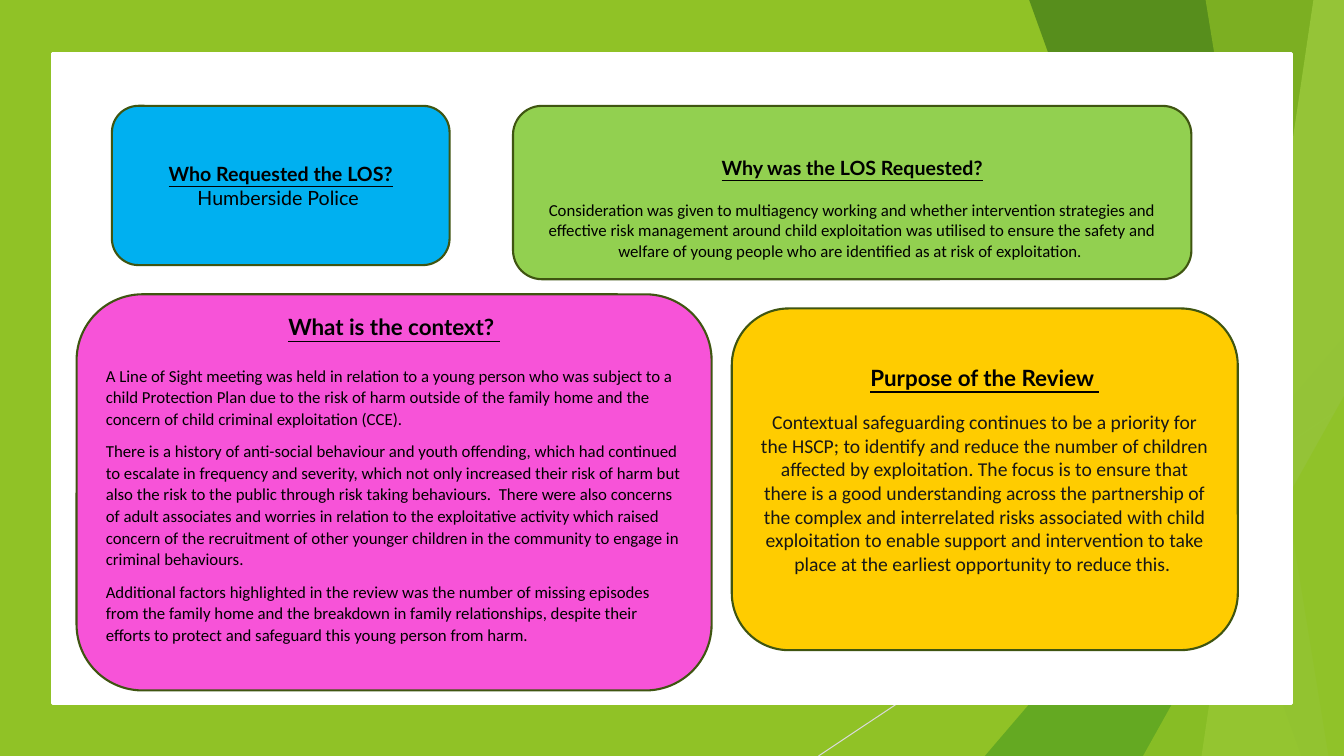
from collections import namedtuple
from dataclasses import dataclass

from lxml import etree
from pptx import Presentation, util as u
from pptx.dml.color import RGBColor
from pptx.enum import shapes, text
from pptx.oxml import ns

COLUMNS, ROWS = 160, 90

Box = namedtuple("Box", "left top width height")
Card = namedtuple("Card", "cells fill heading heading_size body body_size "
                  "gap top_room bottom_room body_color align spacing after",
                  defaults=[0, 0, 0, "000000", text.PP_ALIGN.CENTER, 1.0, 0])


@dataclass(frozen=True)
class Theme:
    green: str = "90C226"
    mid_green: str = "54A021"
    dark_green: str = "3F7819"
    pale_green: str = "C0E474"
    white: str = "FFFFFF"
    ray: str = "D9D9D9"
    outline: str = "3F5511"
    ink: str = "000000"
    soft_ink: str = "171717"
    blue: str = "00B0F0"
    lime: str = "92D050"
    pink: str = "F753D8"
    yellow: str = "FFCC00"
    heading_font: str = "Lato"
    body_font: str = "Calibri"
    large: int = 16
    medium: int = 14
    small: int = 12


THEME = Theme()

CARDS = [
    Card((13.32, 12.6, 40.2, 18.96), THEME.blue, "Who Requested the LOS?", THEME.medium,
         ["Humberside Police "], THEME.medium),
    Card((61.08, 12.6, 80.76, 20.64), THEME.lime, "Why was the LOS Requested?", THEME.medium,
         ["Consideration was given to multiagency working and whether intervention strategies "
          "and effective risk management around child exploitation was utilised to ensure the "
          "safety and welfare of young people who are identified as at risk of exploitation. "],
         THEME.small, gap=15, top_room=22),
    Card((9.12, 35.04, 75.6, 47.16), THEME.pink, "What is the context? ", THEME.large,
         ["A Line of Sight meeting was held in relation to a young person who was subject to a "
          "child Protection Plan due to the risk of harm outside of the family home and the "
          "concern of child criminal exploitation (CCE).",
          "There is a history of anti-social behaviour and youth offending, which had continued "
          "to escalate in frequency and severity, which not only increased their risk of harm "
          "but also the risk to the public through risk taking behaviours.  There were also "
          "concerns of adult associates and worries in relation to the exploitative activity "
          "which raised concern of the recruitment of other younger children in the community "
          "to engage in criminal behaviours.",
          "Additional factors highlighted in the review was the number of missing episodes from "
          "the family home and the breakdown in family relationships, despite their efforts to "
          "protect and safeguard this young person from harm."],
         THEME.small, gap=17, bottom_room=19, align=text.PP_ALIGN.LEFT, spacing=1.07, after=8),
    Card((87.12, 36.72, 60.24, 40.68), THEME.yellow, "Purpose of the Review ", THEME.large,
         ["Contextual safeguarding continues to be a priority for the HSCP; to identify and "
          "reduce the number of children affected by exploitation. The focus is to ensure that "
          "there is a good understanding across the partnership of the complex and interrelated "
          "risks associated with child exploitation to enable support and intervention to take "
          "place at the earliest opportunity to reduce this. "],
         THEME.medium, gap=14, bottom_room=14, body_color=THEME.soft_ink),
]


def point(box, column, row):
    return (round(box.left + box.width * column / COLUMNS),
            round(box.top + box.height * row / ROWS))


def cell_box(box, column, row, columns, rows):
    return Box(*point(box, column, row),
               round(box.width * columns / COLUMNS), round(box.height * rows / ROWS))


def paint(shape, fill, opacity=100, line=None, width=1.0):
    shape.shadow.inherit = False
    shape.fill.solid()
    shape.fill.fore_color.rgb = RGBColor.from_string(fill)
    if opacity < 100:
        color = shape.fill._xPr.find(ns.qn("a:solidFill"))[0]
        etree.SubElement(color, ns.qn("a:alpha"), val=str(opacity * 1000))
    if line:
        shape.line.color.rgb = RGBColor.from_string(line)
        shape.line.width = u.Pt(width)
    else:
        shape.line.fill.background()


def add_ray(slide, box):
    ray = slide.shapes.add_connector(shapes.MSO_CONNECTOR.STRAIGHT,
                                     *point(box, COLUMNS, 48.36), *point(box, 97.44, ROWS))
    ray.line.color.rgb = RGBColor.from_string(THEME.ray)
    ray.line.width = u.Pt(0.75)
    etree.SubElement(ray._element.spPr, ns.qn("a:effectLst"))


def add_facet(slide, box, top_column, bottom_column, fill, opacity):
    """Full-height panel whose slanted left edge runs between the two columns."""
    corners = [point(box, *corner) for corner in
               [(top_column, 0), (COLUMNS, 0), (COLUMNS, ROWS), (bottom_column, ROWS)]]
    builder = slide.shapes.build_freeform(*corners[0])
    builder.add_line_segments(corners[1:], close=True)
    paint(builder.convert_to_shape(), fill, opacity)


def add_wedge(slide, box, column, row, fill, opacity):
    """Right triangle that fills the lower right corner from the given cell."""
    wedge = slide.shapes.add_shape(shapes.MSO_SHAPE.ISOSCELES_TRIANGLE,
                                   *cell_box(box, column, row, COLUMNS - column, ROWS - row))
    wedge.adjustments[0] = 1.0
    paint(wedge, fill, opacity)


def add_backdrop(slide, box):
    paint(slide.shapes.add_shape(shapes.MSO_SHAPE.RECTANGLE, *box), THEME.green)
    add_ray(slide, box)
    add_facet(slide, box, 147.36, 120.48, THEME.green, 30)
    add_facet(slide, box, 126, 141.96, THEME.green, 20)
    add_wedge(slide, box, 117.24, 40, THEME.mid_green, 72)
    add_facet(slide, box, 122.52, 154.92, THEME.dark_green, 70)
    add_facet(slide, box, 156.36, 143.04, THEME.pale_green, 70)
    add_facet(slide, box, 143.52, 158.16, THEME.green, 65)
    add_wedge(slide, box, 136.08, 47.16, THEME.green, 80)
    panel = slide.shapes.add_shape(shapes.MSO_SHAPE.RECTANGLE,
                                   *cell_box(box, 6.25, 6.36, 147.5, 77.4))
    paint(panel, THEME.white, line=THEME.white, width=1.75)


def write(paragraph, words, size, font, color, align, heading=False):
    paragraph.text = words
    paragraph.alignment = align
    style = paragraph.runs[0].font
    style.size, style.name = u.Pt(size), font
    style.bold = style.underline = heading
    style.color.rgb = RGBColor.from_string(color)


def add_card(slide, box, card):
    shape = slide.shapes.add_shape(shapes.MSO_SHAPE.ROUNDED_RECTANGLE, *box)
    paint(shape, card.fill, line=THEME.outline, width=1.5)
    frame = shape.text_frame
    frame.word_wrap = True
    frame.vertical_anchor = text.MSO_ANCHOR.MIDDLE
    frame.margin_top += u.Pt(card.top_room)
    frame.margin_bottom += u.Pt(card.bottom_room)

    heading = frame.paragraphs[0]
    write(heading, card.heading, card.heading_size, THEME.heading_font, THEME.ink,
          text.PP_ALIGN.CENTER, heading=True)
    heading.space_after = u.Pt(card.gap)
    body_font = THEME.body_font if card.gap else THEME.heading_font
    for words in card.body:
        paragraph = frame.add_paragraph()
        write(paragraph, words, card.body_size, body_font, card.body_color, card.align)
        paragraph.line_spacing = card.spacing
        paragraph.space_after = u.Pt(card.after)
    paragraph.space_after = u.Pt(0)


def main():
    presentation = Presentation()
    presentation.slide_width, presentation.slide_height = u.Inches(13.33), u.Inches(7.5)
    slide = presentation.slides.add_slide(presentation.slide_layouts[6])
    page = Box(0, 0, presentation.slide_width, presentation.slide_height)
    add_backdrop(slide, page)
    for card in CARDS:
        add_card(slide, cell_box(page, *card.cells), card)
    presentation.save("out.pptx")


if __name__ == "__main__":
    main()
